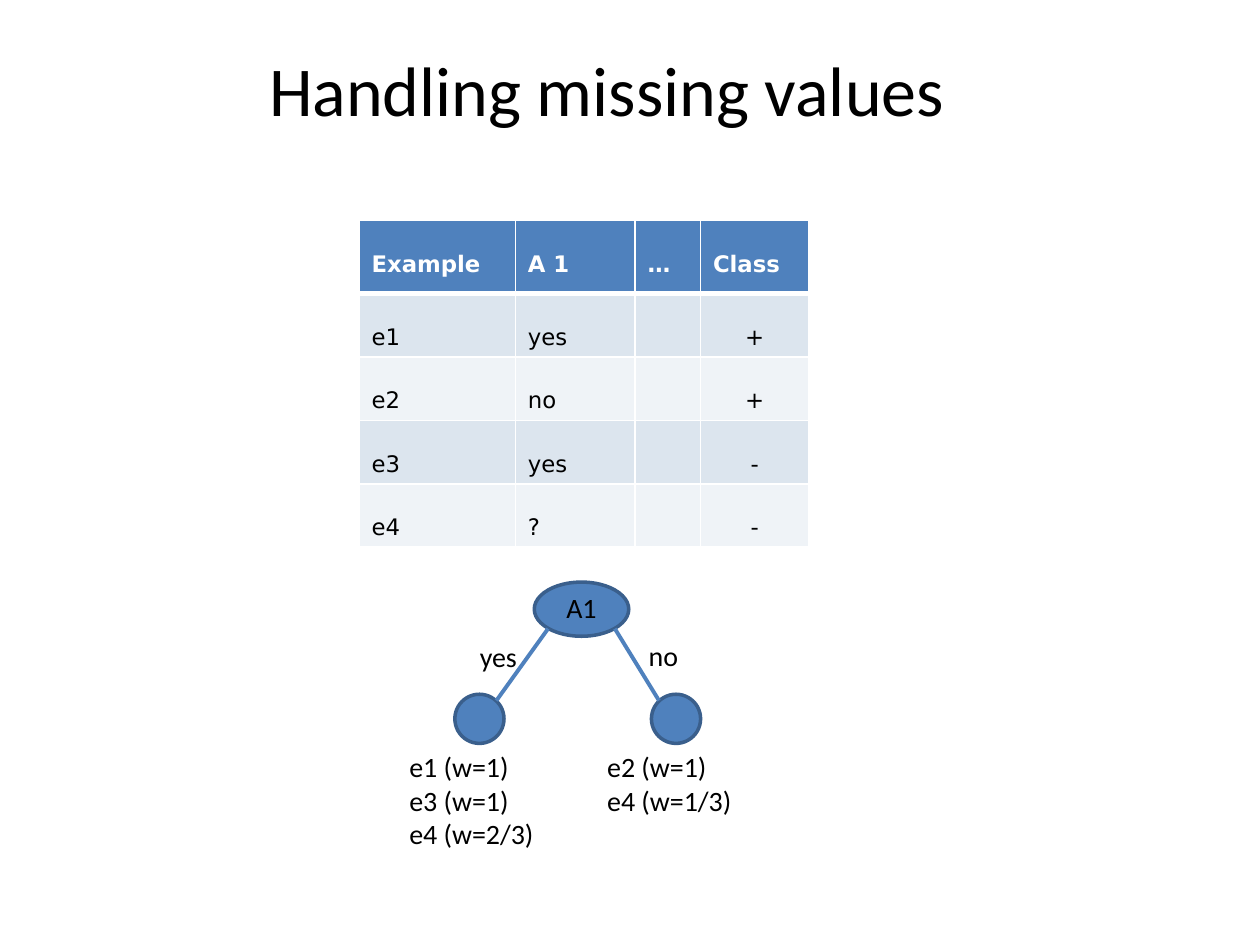
from lxml import etree
from pptx import Presentation
from pptx import util as u
from pptx.dml.color import RGBColor
from pptx.enum import shapes, text
from pptx.oxml.ns import qn

BLACK = RGBColor(0, 0, 0)
WHITE = RGBColor(0xFF, 0xFF, 0xFF)
BLUE = RGBColor(0x4F, 0x81, 0xBD)
DARK_BLUE = RGBColor(0x3A, 0x5F, 0x8C)
BAND = RGBColor(0xDC, 0xE5, 0xEE)
PALE = RGBColor(0xEF, 0xF3, 0xF7)
LEFT, CENTER = text.PP_ALIGN.LEFT, text.PP_ALIGN.CENTER

TREE_FONT = {"name": "Calibri", "size": u.Pt(16)}
TITLE_FONT = {"name": "Calibri", "size": u.Pt(40)}
HEAD_FONT = {"name": "DejaVu Sans", "size": u.Pt(13), "bold": True}
BODY_FONT = {"name": "DejaVu Sans", "size": u.Pt(13), "bold": False}


def write(para, words, font, color=BLACK, align=LEFT):
    para.alignment = align
    span = para.add_run()
    span.text = words
    for name, value in font.items():
        setattr(span.font, name, value)
    span.font.color.rgb = color


def add_label(parent, place, lines, font=TREE_FONT, align=CENTER):
    box = parent.add_textbox(*map(u.Inches, place))
    frame = box.text_frame
    frame.word_wrap = True
    for index, words in enumerate(lines):
        para = frame.add_paragraph() if index else frame.paragraphs[0]
        write(para, words, font, align=align)
    return frame


deck = Presentation()
deck.slide_width, deck.slide_height = u.Inches(10), u.Inches(7.5)
page = deck.slides.add_slide(deck.slide_layouts[6])

# Title
title = add_label(page.shapes, (1.63, 0.25, 6.37, 0.9),
                  ["Handling missing values"], TITLE_FONT)
title.vertical_anchor = text.MSO_ANCHOR.MIDDLE

# Table of examples
EXAMPLES = [
    ("Example", "A 1", "…", "Class"),
    ("e1", "yes", "", "+"),
    ("e2", "no", "", "+"),
    ("e3", "yes", "", "-"),
    ("e4", "?", "", "-"),
]
WIDTHS = (1.24, 0.95, 0.52, 0.86)
HEIGHTS = (0.58, 0.5, 0.5, 0.5, 0.5)
table = page.shapes.add_table(
    len(EXAMPLES), len(WIDTHS), u.Inches(2.85), u.Inches(1.75),
    u.Inches(sum(WIDTHS)), u.Inches(sum(HEIGHTS))).table
for column, width in zip(table.columns, WIDTHS):
    column.width = u.Inches(width)
for row, height in zip(table.rows, HEIGHTS):
    row.height = u.Inches(height)

for r, values in enumerate(EXAMPLES):
    for c, value in enumerate(values):
        cell = table.cell(r, c)
        cell.fill.solid()
        cell.fill.fore_color.rgb = BLUE if r == 0 else BAND if r % 2 else PALE
        if value:
            para = cell.text_frame.paragraphs[0]
            para.line_spacing = u.Pt(29)
            write(para, value, BODY_FONT if r else HEAD_FONT,
                  BLACK if r else WHITE, CENTER if r and c == 3 else LEFT)
        # White cell borders, thicker below the header
        borders = {"a:lnL": 1, "a:lnR": 1,
                   "a:lnT": 3 if r == 1 else 1, "a:lnB": 1 if r else 3}
        properties = cell._tc.get_or_add_tcPr()
        for index, (side, points) in enumerate(borders.items()):
            border = etree.Element(qn(side), w=str(u.Pt(points)))
            paint = etree.SubElement(border, qn("a:solidFill"))
            etree.SubElement(paint, qn("a:srgbClr"), val=str(WHITE))
            properties.insert(index, border)

# Decision tree: nodes
tree = page.shapes.add_group_shape().shapes
for place in ((4.24, 4.62, 0.75, 0.43), (3.61, 5.51, 0.39, 0.39),
              (5.17, 5.51, 0.39, 0.39)):
    node = tree.add_shape(shapes.MSO_SHAPE.OVAL, *map(u.Inches, place))
    node.shadow.inherit = False
    node.fill.solid()
    node.fill.fore_color.rgb = BLUE
    node.line.color.rgb = DARK_BLUE
    node.line.width = u.Pt(2)

# Decision tree: branches
for ends in ((4.35, 4.99, 3.94, 5.56), (4.88, 4.99, 5.23, 5.56)):
    branch = tree.add_connector(shapes.MSO_CONNECTOR.STRAIGHT, *map(u.Inches, ends))
    branch.line.color.rgb = BLUE
    branch.line.width = u.Pt(2.25)
    etree.SubElement(branch._element.spPr, qn("a:effectLst"))

# Decision tree: labels
add_label(tree, (4.3, 4.64, 0.63, 0.37), ["A1"])
add_label(tree, (3.5, 5.03, 0.91, 0.37), ["yes"])
add_label(tree, (4.81, 5.02, 0.91, 0.37), ["no"])

# Weighted examples under each leaf
add_label(page.shapes, (3.15, 5.9, 1.31, 0.9),
          ["e1 (w=1)", "e3 (w=1)", "e4 (w=2/3)"], align=LEFT)
add_label(page.shapes, (4.72, 5.9, 1.31, 0.64),
          ["e2 (w=1)", "e4 (w=1/3)"], align=LEFT)

deck.save("out.pptx")
